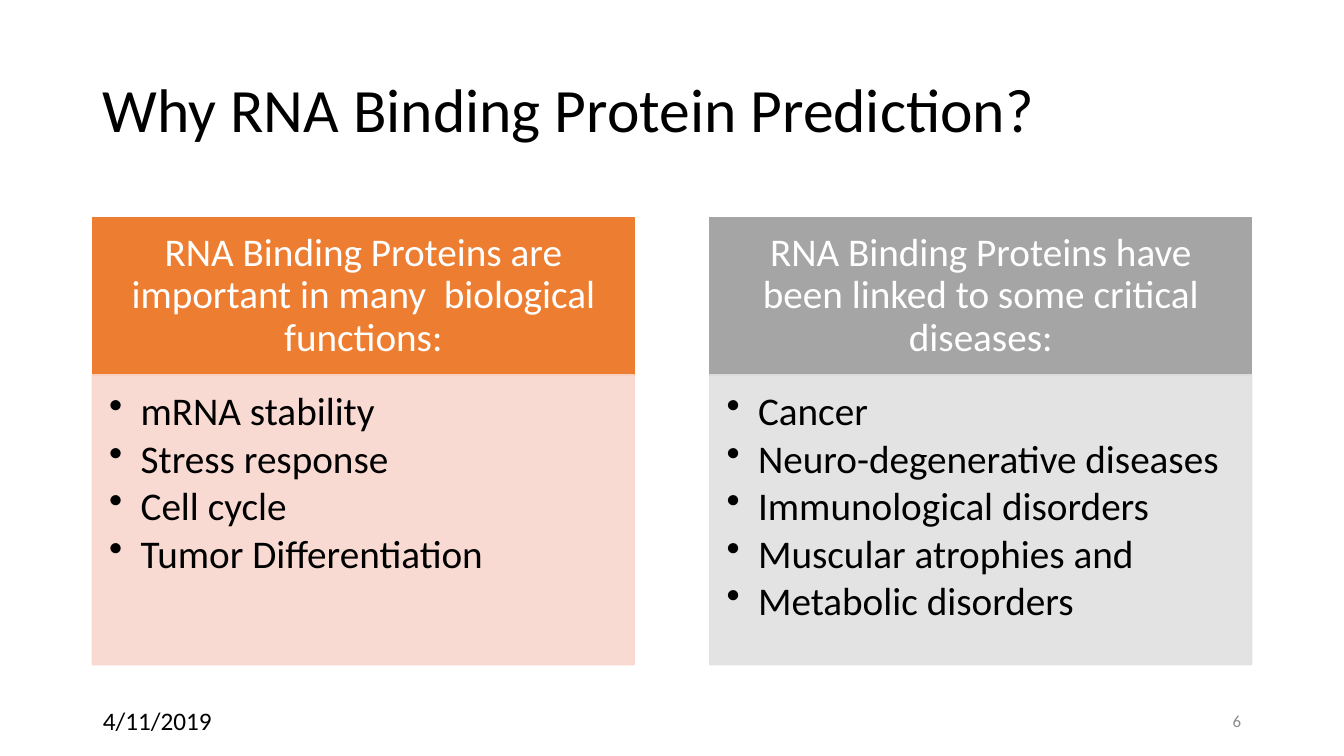
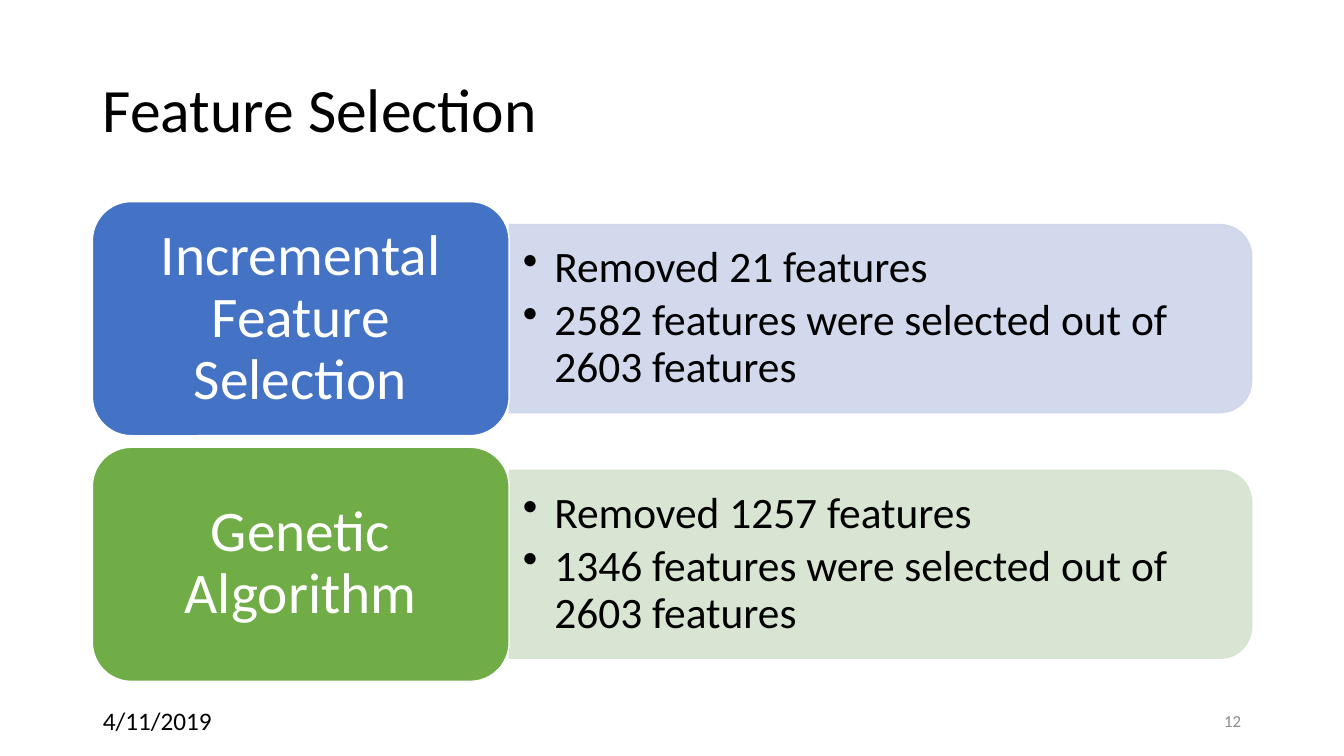
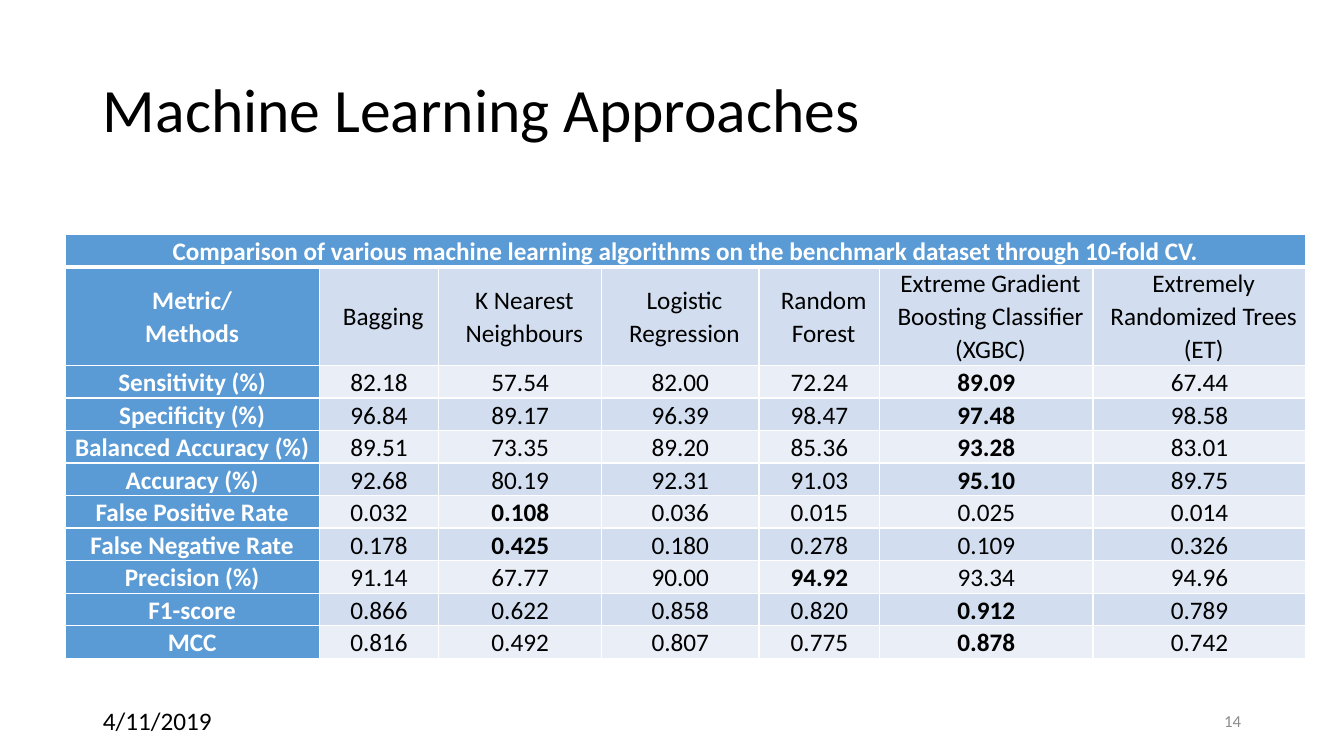
from dataclasses import dataclass, field
from typing import Any

from lxml.etree import SubElement
from pptx import Presentation
from pptx.dml.color import RGBColor
from pptx.enum.shapes import MSO_SHAPE as Preset
from pptx.enum.text import MSO_ANCHOR as Anchor, PP_ALIGN as Align
from pptx.oxml.ns import qn
from pptx.util import Emu, Pt

EMU_PER_PX = 9525


@dataclass(frozen=True)
class Theme:
    font: str = "Calibri"
    black: str = "000000"
    white: str = "FFFFFF"
    page_grey: str = "8C8C8C"
    table_head: str = "5B9BD5"
    table_bands: tuple[str, str] = ("EAEFF7", "D2DEEF")
    title_size: int = 44
    tile_size: int = 41
    bar_size: int = 31
    panel_size: int = 28
    table_size: int = 18
    date_size: int = 18
    page_size: int = 12
    tight: float = 0.9
    table_spacing: float = 1.07
    bullet_gap: float = 0.133


THEME = Theme()
SLIDE_W, SLIDE_H = 1280, 720
LEFT, CONTENT_W = 88, 1104
DATE = "4/11/2019"


@dataclass(frozen=True)
class Box:
    x: int
    y: int
    w: int
    h: int

    def emu(self) -> tuple[Emu, ...]:
        return tuple(px(side) for side in (self.x, self.y, self.w, self.h))

    def turned(self) -> "Box":
        """The unrotated frame that covers this box after a quarter turn."""
        shift = (self.w - self.h) // 2
        return Box(self.x + shift, self.y - shift, self.h, self.w)


@dataclass(frozen=True)
class TextStyle:
    size: int
    color: str = THEME.black
    bold: bool = False
    align: Align = Align.LEFT
    spacing: float = 1.0
    bulleted: bool = False
    indent: int = 0


@dataclass(frozen=True)
class Topic:
    heading: str
    points: tuple[str, ...]
    color: str
    tint: str


@dataclass(frozen=True)
class Metric:
    name: str
    scores: str
    bold_column: int


@dataclass(frozen=True)
class Frame:
    """Insets (left, top, right, bottom) and vertical anchor of a text."""
    insets: tuple[int, int, int, int] = (10, 5, 10, 5)
    anchor: Anchor = Anchor.MIDDLE

    def values(self) -> dict[str, Any]:
        sides = ("margin_left", "margin_top", "margin_right", "margin_bottom")
        return {**{side: px(inset) for side, inset in zip(sides, self.insets)},
                "vertical_anchor": self.anchor}


MIDDLE = Frame()
TITLE = TextStyle(THEME.title_size, spacing=THEME.tight)
DATE_TEXT = TextStyle(THEME.date_size)
PAGE_TEXT = TextStyle(THEME.page_size, THEME.page_grey, align=Align.RIGHT)
PANEL_HEAD = TextStyle(THEME.panel_size, THEME.white, align=Align.CENTER, spacing=THEME.tight)
PANEL_POINT = TextStyle(THEME.panel_size, spacing=THEME.tight, bulleted=True)
TILE_TEXT = TextStyle(THEME.tile_size, THEME.white, align=Align.CENTER, spacing=THEME.tight)
BAR_POINT = TextStyle(THEME.bar_size, spacing=THEME.tight, bulleted=True)


def px(length: int) -> Emu:
    return Emu(length * EMU_PER_PX)


def rgb(color: str) -> RGBColor:
    return RGBColor.from_string(color)


def assign(target: Any, values: dict[str, Any]) -> None:
    for name, value in values.items():
        setattr(target, name, value)


def write(text_frame: Any, lines: tuple[str, ...], style: TextStyle) -> None:
    for index, line in enumerate(lines):
        paragraph = text_frame.add_paragraph() if index else text_frame.paragraphs[0]
        assign(paragraph, {"alignment": style.align, "line_spacing": style.spacing})
        properties = paragraph._p.get_or_add_pPr()
        if style.indent:
            properties.set("marL", str(px(style.indent)))
        if style.bulleted:
            paragraph.space_after = Pt(round(style.size * THEME.bullet_gap, 1))
            properties.set("marL", str(px(30)))
            properties.set("indent", str(px(-30)))
            SubElement(properties, qn("a:buChar"), char="•")
        run = paragraph.add_run()
        run.text = line
        assign(run.font, {"name": THEME.font, "size": Pt(style.size), "bold": style.bold})
        run.font.color.rgb = rgb(style.color)


def add_text(slide: Any, box: Box, lines: tuple[str, ...], style: TextStyle,
             frame: Frame = MIDDLE) -> None:
    text_frame = slide.shapes.add_textbox(*box.emu()).text_frame
    assign(text_frame, {"word_wrap": True, **frame.values()})
    write(text_frame, lines, style)


def add_block(slide: Any, preset: Preset, box: Box, fill: str, line: str,
              opacity: int = 100) -> Any:
    block = slide.shapes.add_shape(preset, *box.emu())
    block.shadow.inherit = False
    block.fill.solid()
    block.fill.fore_color.rgb = rgb(fill)
    block.line.width = Pt(1)
    block.line.color.rgb = rgb(line)
    if opacity < 100:
        for color in block._element.spPr.iter(qn("a:srgbClr")):
            SubElement(color, qn("a:alpha"), val=str(opacity * 1000))
    return block


def fill_block(block: Any, lines: tuple[str, ...], style: TextStyle, frame: Frame) -> None:
    assign(block.text_frame, {"word_wrap": True, **frame.values()})
    write(block.text_frame, lines, style)


def add_page(deck: Any, title: str, number: int) -> Any:
    slide = deck.slides.add_slide(deck.slide_layouts[6])
    add_text(slide, Box(LEFT, 38, CONTENT_W, 139), (title,), TITLE)
    add_text(slide, Box(LEFT, 667, 288, 38), (DATE,), DATE_TEXT, Frame(anchor=Anchor.TOP))
    add_text(slide, Box(LEFT + CONTENT_W - 288, 667, 288, 38), (str(number),), PAGE_TEXT)
    return slide


REASONS = (
    Topic("RNA Binding Proteins are important in many  biological functions:",
          ("mRNA stability", "Stress response", "Cell cycle", "Tumor Differentiation"),
          "ED7D31", "F8D7CE"),
    Topic("RNA Binding Proteins have been linked to some critical diseases:",
          ("Cancer", "Neuro-degenerative diseases", "Immunological disorders",
           "Muscular atrophies and", "Metabolic disorders"),
          "A5A5A5", "E1E1E1"),
)


def add_reasons(slide: Any) -> None:
    width, top, head_h, body_h = 516, 207, 150, 276
    for index, topic in enumerate(REASONS):
        x = LEFT + index * (CONTENT_W - width)
        head = add_block(slide, Preset.RECTANGLE, Box(x, top, width, head_h),
                         topic.color, topic.color)
        fill_block(head, (topic.heading,), PANEL_HEAD, Frame((21, 12, 21, 12)))
        body = add_block(slide, Preset.RECTANGLE, Box(x, top + head_h, width, body_h),
                         topic.tint, topic.tint, opacity=90)
        fill_block(body, topic.points, PANEL_POINT, Frame((16, 16, 21, 23), Anchor.TOP))


SELECTIONS = (
    Topic("Incremental Feature Selection",
          ("Removed 21 features", "2582 features were selected out of 2603 features"),
          "4472C4", "CFD5EA"),
    Topic("Genetic Algorithm",
          ("Removed 1257 features", "1346 features were selected out of 2603 features"),
          "70AD47", "D5E3CF"),
)


def add_selections(slide: Any) -> None:
    tile_w, tile_h, pitch, bar_h = 397, 223, 234, 179
    bar_x, bar_w = LEFT + tile_w, CONTENT_W - tile_w
    for index, topic in enumerate(SELECTIONS):
        y = 192 + index * pitch
        bar = Box(bar_x, y + (tile_h - bar_h) // 2, bar_w, bar_h)
        add_block(slide, Preset.ROUND_2_SAME_RECTANGLE, bar.turned(),
                  topic.tint, topic.tint, opacity=90).rotation = 90
        add_text(slide, Box(bar.x, bar.y + 9, bar.w - 9, bar.h - 18), topic.points,
                 BAR_POINT, Frame((13, 6, 13, 6)))
        tile = add_block(slide, Preset.ROUNDED_RECTANGLE, Box(LEFT, y, tile_w, tile_h),
                         topic.color, THEME.white)
        fill_block(tile, (topic.heading,), TILE_TEXT, Frame((16, 9, 16, 9)))


CAPTION = ("Comparison of various machine learning algorithms on the benchmark "
           "dataset through 10-fold CV.")
METHODS = ("Bagging", "K Nearest Neighbours", "Logistic Regression", "Random Forest",
           "Extreme Gradient Boosting Classifier (XGBC)", "Extremely Randomized Trees (ET)")
METRICS = (
    Metric("Sensitivity (%)", "82.18 57.54 82.00 72.24 89.09 67.44", 5),
    Metric("Specificity (%)", "96.84 89.17 96.39 98.47 97.48 98.58", 5),
    Metric("Balanced Accuracy (%)", "89.51 73.35 89.20 85.36 93.28 83.01", 5),
    Metric("Accuracy (%)", "92.68 80.19 92.31 91.03 95.10 89.75", 5),
    Metric("False Positive Rate", "0.032 0.108 0.036 0.015 0.025 0.014", 2),
    Metric("False Negative Rate", "0.178 0.425 0.180 0.278 0.109 0.326", 2),
    Metric("Precision (%)", "91.14 67.77 90.00 94.92 93.34 94.96", 4),
    Metric("F1-score", "0.866 0.622 0.858 0.820 0.912 0.789", 5),
    Metric("MCC", "0.816 0.492 0.807 0.775 0.878 0.742", 5),
)
COLUMN_WIDTHS = (242, 114, 155, 150, 115, 203, 203)
LINE_H, METHODS_H = 31, 94


def add_borders(cell: Any, top: int, bottom: int) -> None:
    """White cell edges; the widths are in points and precede the fill."""
    properties = cell._tc.get_or_add_tcPr()
    widths = {"a:lnL": 1, "a:lnR": 1, "a:lnT": top, "a:lnB": bottom}
    for position, (tag, width) in enumerate(widths.items()):
        edge = SubElement(properties, qn(tag), w=str(Pt(width)))
        SubElement(SubElement(edge, qn("a:solidFill")), qn("a:srgbClr"), val=THEME.white)
        properties.insert(position, edge)


def add_comparison(slide: Any) -> None:
    rows = [(CAPTION,) + ("",) * len(METHODS), ("Metric/\nMethods", *METHODS)]
    rows += [(metric.name, *metric.scores.split()) for metric in METRICS]
    heights = [LINE_H, METHODS_H] + [LINE_H] * len(METRICS)
    area = Box(62, 223, sum(COLUMN_WIDTHS), sum(heights))
    table = slide.shapes.add_table(len(rows), len(COLUMN_WIDTHS), *area.emu()).table
    assign(table, {"first_row": False, "horz_banding": False})
    for column, width in zip(table.columns, COLUMN_WIDTHS):
        column.width = px(width)
    for table_row, height in zip(table.rows, heights):
        table_row.height = px(height)
    table.cell(0, 0).merge(table.cell(0, len(METHODS)))

    for r, texts in enumerate(rows):
        for c, text in enumerate(texts):
            cell = table.cell(r, c)
            is_head = r == 0 or c == 0
            is_bold = is_head or (r > 1 and c == METRICS[r - 2].bold_column)
            assign(cell, Frame((7, 0, 7, 0)).values())
            cell.fill.solid()
            cell.fill.fore_color.rgb = rgb(THEME.table_head if is_head
                                           else THEME.table_bands[r % 2])
            add_borders(cell, top=3 if r == 1 else 1, bottom=3 if r == 0 else 1)
            if text:
                style = TextStyle(THEME.table_size, THEME.white if is_head else THEME.black,
                                  is_bold, Align.CENTER, THEME.table_spacing,
                                  indent=8 if r == 1 and c else 0)
                write(cell.text_frame, tuple(text.split("\n")), style)


def main() -> None:
    deck = Presentation()
    assign(deck, {"slide_width": px(SLIDE_W), "slide_height": px(SLIDE_H)})
    add_reasons(add_page(deck, "Why RNA Binding Protein Prediction?", 6))
    add_selections(add_page(deck, "Feature Selection", 12))
    add_comparison(add_page(deck, "Machine Learning Approaches", 14))
    deck.save("out.pptx")


if __name__ == "__main__":
    main()
